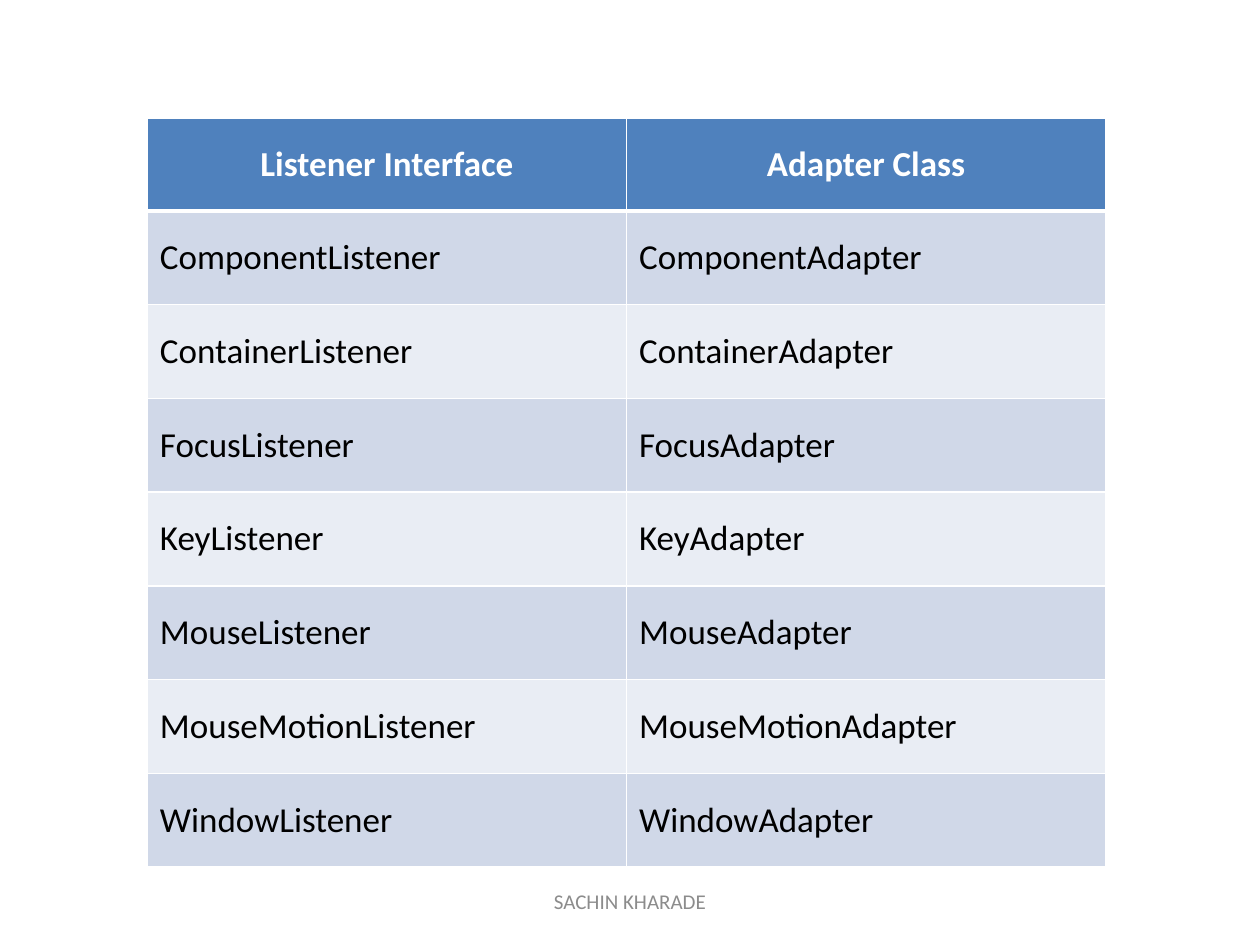
from lxml import etree
from pptx import Presentation
from pptx import util as u
from pptx.dml import color
from pptx.enum import text
from pptx.oxml import ns

COLORS = {
    "header": "4F81BD",
    "odd": "D0D8E8",
    "even": "E9EDF4",
    "white": "FFFFFF",
    "black": "000000",
    "footer": "8C8C8C",
}
EVENTS = ["Component", "Container", "Focus", "Key", "Mouse", "MouseMotion", "Window"]


def format_text(frame, size, hex_color, bold=False, align=text.PP_ALIGN.LEFT):
    frame.vertical_anchor = text.MSO_ANCHOR.MIDDLE
    paragraph = frame.paragraphs[0]
    paragraph.alignment = align
    font = paragraph.runs[0].font
    font.name = "Calibri"
    font.size = u.Pt(size)
    font.bold = bold
    font.color.rgb = color.RGBColor.from_string(hex_color)


def add_border(cell, side, points):
    line = etree.SubElement(cell._tc.get_or_add_tcPr(), ns.qn(f"a:ln{side}"), w=str(u.Pt(points)))
    fill = etree.SubElement(line, ns.qn("a:solidFill"))
    etree.SubElement(fill, ns.qn("a:srgbClr"), val=COLORS["white"])


deck = Presentation()
deck.slide_width, deck.slide_height = u.Cm(25.4), u.Cm(19.05)
slide = deck.slides.add_slide(deck.slide_layouts[6])

# Listener and adapter table
rows = [("Listener Interface", "Adapter Class")]
rows += [(f"{event}Listener", f"{event}Adapter") for event in EVENTS]
adapters = slide.shapes.add_table(
    len(rows), 2, u.Cm(2.97), u.Cm(2.39), u.Cm(19.32), u.Cm(15.09)
).table
for column in adapters.columns:
    column.width = u.Cm(9.66)

for r, labels in enumerate(rows):
    is_header = r == 0
    adapters.rows[r].height = u.Cm(1.86 if is_header else 1.89)
    band = "header" if is_header else ("odd" if r % 2 else "even")
    for c, label in enumerate(labels):
        cell = adapters.cell(r, c)
        cell.text_frame.text = label
        format_text(
            cell.text_frame, 20,
            COLORS["white" if is_header else "black"],
            bold=is_header,
            align=text.PP_ALIGN.CENTER if is_header else text.PP_ALIGN.LEFT,
        )
        cell.vertical_anchor = text.MSO_ANCHOR.MIDDLE
        # The rule under the header is thicker than the other lines
        thickness = {"L": 1, "R": 1, "T": 3 if r == 1 else 1, "B": 3 if is_header else 1}
        for side, points in thickness.items():
            add_border(cell, side, points)
        cell.fill.solid()
        cell.fill.fore_color.rgb = color.RGBColor.from_string(COLORS[band])

# Footer
footer = slide.shapes.add_textbox(u.Cm(8.68), u.Cm(17.66), u.Cm(8.04), u.Cm(1.01))
footer.text_frame.word_wrap = True
footer.text_frame.text = "SACHIN KHARADE"
format_text(footer.text_frame, 12, COLORS["footer"], align=text.PP_ALIGN.CENTER)

deck.save("out.pptx")
